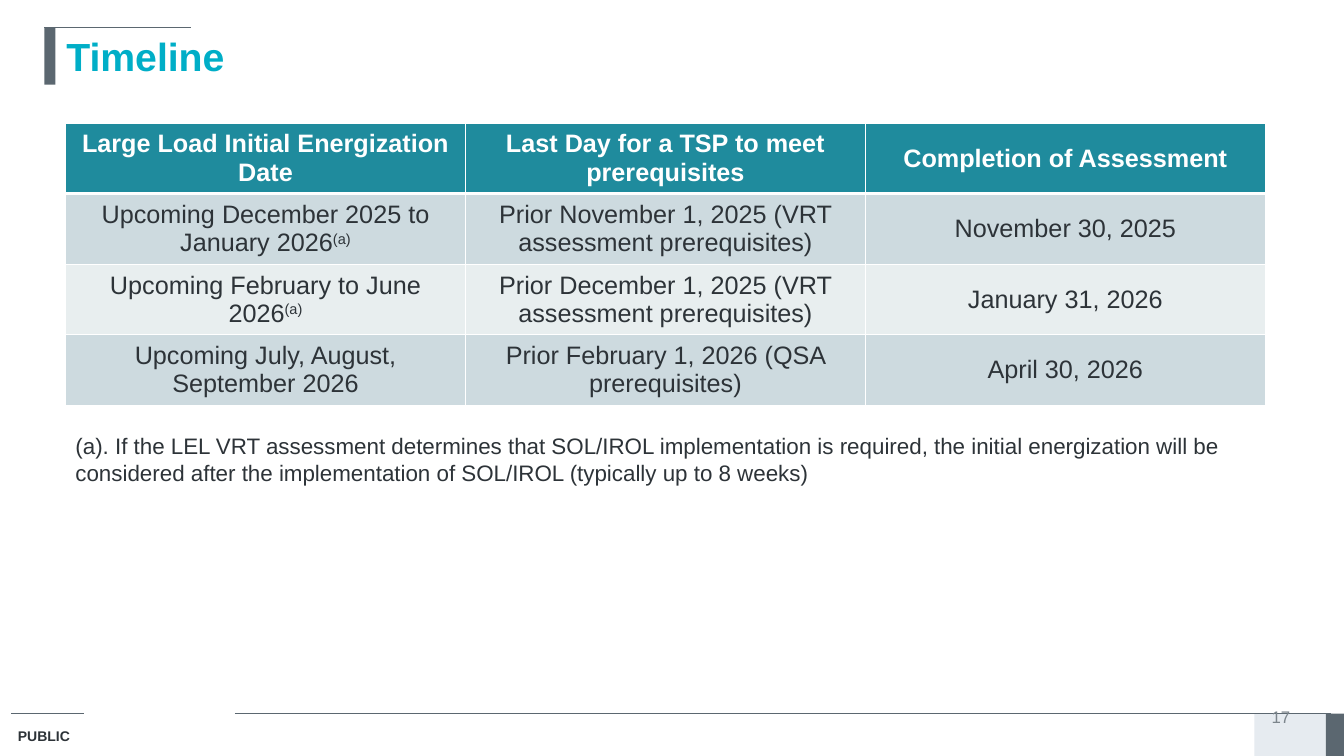
from pptx import Presentation
from pptx.dml.color import RGBColor
from pptx.enum.shapes import MSO_CONNECTOR, MSO_SHAPE
from pptx.enum.text import MSO_ANCHOR, PP_ALIGN
from pptx.oxml.ns import qn
from pptx.util import Inches, Pt
from lxml import etree

RECTANGLE = MSO_SHAPE.RECTANGLE
STRAIGHT = MSO_CONNECTOR.STRAIGHT
TOP, MIDDLE = MSO_ANCHOR.TOP, MSO_ANCHOR.MIDDLE
LEFT, CENTER = PP_ALIGN.LEFT, PP_ALIGN.CENTER

FONT = "Arial"
COLORS = {
    "white": "FFFFFF",
    "slate": "5B6770",
    "pale": "E6EBF0",
    "ink": "2D3338",
    "title": "00AEC7",
    "number": "7C858C",
    "header": "1F8B9D",
    "odd_row": "CDDADF",
    "even_row": "E8EEEF",
}

NOTE_MARK = "(a)"
HEADINGS = [
    "Large Load Initial Energization Date",
    "Last Day for a TSP to meet prerequisites",
    "Completion of Assessment",
]
# Energization period, whether the footnote applies, deadline, completion
MILESTONES = [
    ("Upcoming December 2025 to January 2026", True,
     "Prior November 1, 2025 (VRT assessment prerequisites)", "November 30, 2025"),
    ("Upcoming February to June 2026", True,
     "Prior December 1, 2025 (VRT assessment prerequisites)", "January 31, 2026"),
    ("Upcoming July, August, September 2026", False,
     "Prior February 1, 2026 (QSA prerequisites)", "April 30, 2026"),
]
FOOTNOTE = (
    "(a). If the LEL VRT assessment determines that SOL/IROL implementation is "
    "required, the initial energization will be considered after the "
    "implementation of SOL/IROL (typically up to 8 weeks)"
)


def rgb(name):
    return RGBColor.from_string(COLORS[name])


def style_paragraph(paragraph, size, color, bold=False, align=LEFT):
    paragraph.alignment = align
    font = paragraph.font
    font.name, font.size, font.bold = FONT, Pt(size), bold
    font.color.rgb = rgb(color)


def add_block(slide, left, top, width, height, color):
    block = slide.shapes.add_shape(
        RECTANGLE, Inches(left), Inches(top), Inches(width), Inches(height))
    block.shadow.inherit = False
    block.fill.solid()
    block.fill.fore_color.rgb = rgb(color)
    block.line.fill.background()


def add_rule(slide, start, end, y):
    """Draw a thin horizontal line."""
    rule = slide.shapes.add_connector(
        STRAIGHT, Inches(start), Inches(y), Inches(end), Inches(y))
    rule.line.color.rgb = rgb("slate")
    rule.line.width = Pt(0.75)
    etree.SubElement(rule._element.spPr, qn("a:effectLst"))


def add_text(slide, left, top, width, height, text, size, color,
             bold=False, align=LEFT, anchor=TOP):
    frame = slide.shapes.add_textbox(
        Inches(left), Inches(top), Inches(width), Inches(height)).text_frame
    frame.word_wrap = True
    frame.vertical_anchor = anchor
    paragraph = frame.paragraphs[0]
    paragraph.add_run().text = text
    style_paragraph(paragraph, size, color, bold, align)


def set_borders(cell, bottom_width):
    properties = cell._tc.get_or_add_tcPr()
    for side, width in (("L", 1), ("R", 1), ("T", 1), ("B", bottom_width)):
        border = etree.SubElement(properties, qn(f"a:ln{side}"), w=str(Pt(width)))
        fill = etree.SubElement(border, qn("a:solidFill"))
        etree.SubElement(fill, qn("a:srgbClr"), val=COLORS["white"])


def fill_cell(cell, text, fill, color="ink", bold=False, marked=False, bottom_width=1):
    """Write a cell, with a raised footnote mark if it is marked."""
    set_borders(cell, bottom_width)
    cell.fill.solid()
    cell.fill.fore_color.rgb = rgb(fill)
    cell.vertical_anchor = MIDDLE
    paragraph = cell.text_frame.paragraphs[0]
    paragraph.add_run().text = text
    if marked:
        mark = paragraph.add_run()
        mark.text = NOTE_MARK
        mark._r.get_or_add_rPr().set("baseline", "30000")
    style_paragraph(paragraph, 18, color, bold, CENTER)


def add_timeline(slide):
    row_count = len(MILESTONES) + 1
    table = slide.shapes.add_table(
        row_count, len(HEADINGS), Inches(0.65), Inches(1.22),
        Inches(11.9), Inches(0.66 * row_count)).table
    for column, heading in enumerate(HEADINGS):
        fill_cell(table.cell(0, column), heading, "header", "white", True, bottom_width=3)
    for row, (period, marked, deadline, completion) in enumerate(MILESTONES, 1):
        fill = "odd_row" if row % 2 else "even_row"
        fill_cell(table.cell(row, 0), period, fill, marked=marked)
        fill_cell(table.cell(row, 1), deadline, fill)
        fill_cell(table.cell(row, 2), completion, fill)


def add_footer(slide):
    add_block(slide, 12.44, 7.08, 0.78, 0.42, "pale")
    add_block(slide, 13.15, 7.08, 0.18, 0.42, "slate")
    add_rule(slide, 0.11, 0.83, 7.08)
    add_rule(slide, 2.33, 13.2, 7.08)
    add_text(slide, 0.08, 7.17, 1.03, 0.28, "PUBLIC", 10, "ink", bold=True)
    add_text(slide, 12.35, 6.99, 0.71, 0.24, "17", 12, "number",
             align=CENTER, anchor=MIDDLE)


def add_heading(slide):
    add_block(slide, 0.44, 0.27, 0.11, 0.57, "slate")
    add_rule(slide, 0.44, 1.89, 0.27)
    add_text(slide, 0.56, 0.27, 12.33, 0.57, "Timeline", 28, "title",
             bold=True, anchor=MIDDLE)


def main():
    presentation = Presentation()
    presentation.slide_width = Inches(13.33)
    presentation.slide_height = Inches(7.5)
    slide = presentation.slides.add_slide(presentation.slide_layouts[6])
    add_footer(slide)
    add_heading(slide)
    add_timeline(slide)
    add_text(slide, 0.65, 4.24, 12.24, 0.64, FOOTNOTE, 16, "ink")
    presentation.save("out.pptx")


if __name__ == "__main__":
    main()
